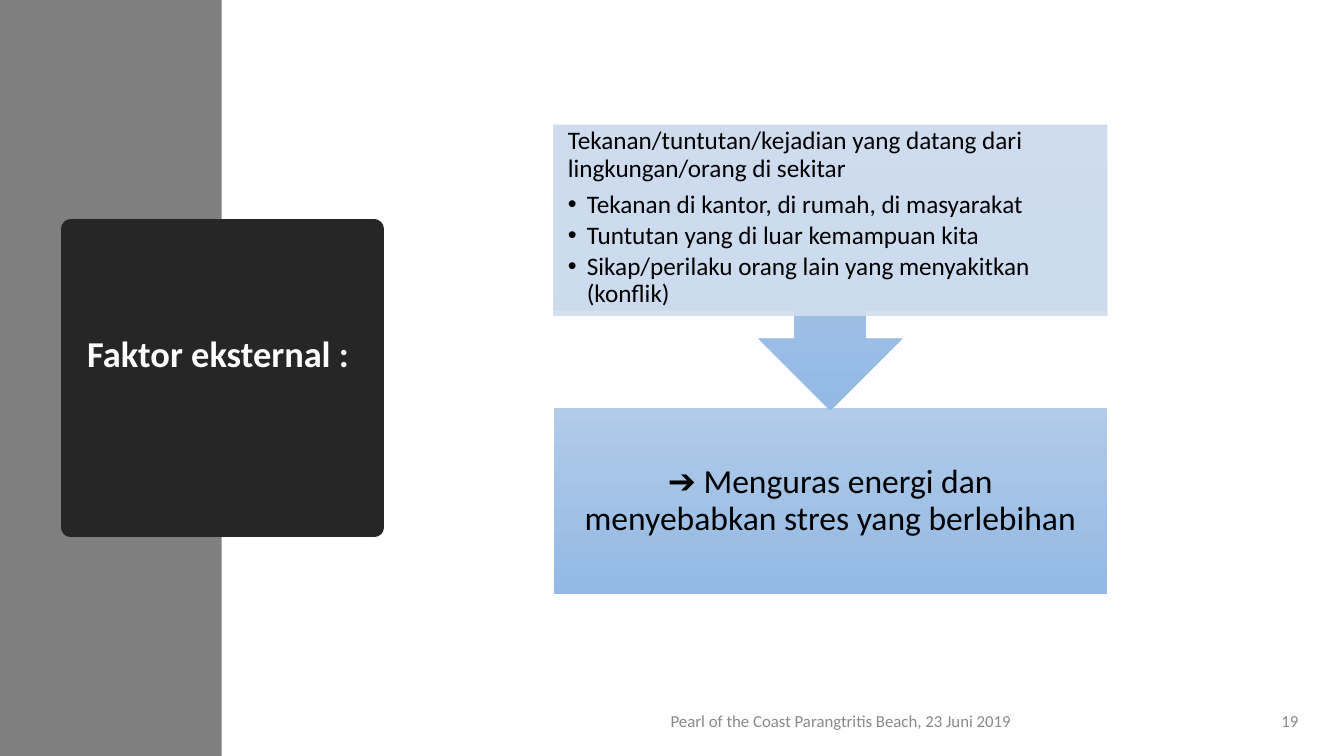
from pptx import Presentation
from pptx.dml.color import RGBColor
from pptx.enum.shapes import MSO_SHAPE as Preset
from pptx.enum.text import MSO_ANCHOR as Anchor, MSO_AUTO_SIZE as AutoSize, PP_ALIGN as Align
from pptx.oxml.ns import qn
from pptx.util import Cm, Pt
from lxml.etree import SubElement

FONT = "Calibri"
SLIDE_WIDTH, SLIDE_HEIGHT = 33.87, 19.05
PRESSURES = [
    "Tekanan di kantor, di rumah, di masyarakat",
    "Tuntutan yang di luar kemampuan kita",
    "Sikap/perilaku orang lain yang menyakitkan (konflik)",
]


def colour(value):
    return RGBColor.from_string(value)


def place(shape, box):
    shape.left, shape.top, shape.width, shape.height = [Cm(length) for length in box]


def set_frame(shape, anchor, side, edge):
    frame = shape.text_frame
    frame.word_wrap = True
    frame.auto_size = AutoSize.NONE
    frame.vertical_anchor = anchor
    frame.margin_left = frame.margin_right = Cm(side)
    frame.margin_top = frame.margin_bottom = Cm(edge)
    return frame


def style(para, size, ink, align, spacing=0.9, after=0, bold=False):
    para.alignment = align
    para.line_spacing = spacing
    para.space_after = Pt(after)
    for span in para.runs:
        span.font.name = FONT
        span.font.size = Pt(size)
        span.font.bold = bold
        span.font.color.rgb = colour(ink)


def add_bullet(para, indent):
    properties = para._p.get_or_add_pPr()
    properties.set("marL", str(Cm(indent)))
    properties.set("indent", str(-Cm(indent)))
    SubElement(properties, qn("a:buFont"), typeface="Arial")
    SubElement(properties, qn("a:buChar"), char="•")


def set_alpha(fill, percent):
    for tone in fill._xPr.iter(qn("a:srgbClr")):
        SubElement(tone, qn("a:alpha"), val=str(percent * 1000))


def add_block(page, preset, box):
    block = page.shapes.add_shape(preset, *[Cm(length) for length in box])
    block.shadow.inherit = False
    block.line.fill.background()
    return block


def shade(block):
    block.fill.gradient()
    block.fill.gradient_angle = 270
    for stop, tone in zip(block.fill.gradient_stops, ("B1CBE9", "93B9E4")):
        stop.color.rgb = colour(tone)


def build_heading(page, box):
    band = add_block(page, Preset.RECTANGLE, (0, 0, 5.59, SLIDE_HEIGHT))
    band.fill.solid()
    band.fill.fore_color.rgb = colour("7F7F7F")
    title = page.shapes.title
    title.element.addprevious(band.element)
    place(title, box)
    title.fill.solid()
    title.fill.fore_color.rgb = colour("262626")
    title.line.color.rgb = colour("262626")
    title.line.width = Pt(13.75)
    frame = set_frame(title, Anchor.MIDDLE, 0.25, 0.13)
    frame.margin_bottom = Cm(1.27)
    frame.text = "Faktor eksternal : "
    style(frame.paragraphs[0], 26, "FFFFFF", Align.CENTER, bold=True)


def build_flow(page, box):
    left, top, width, height = box
    result_height = 4.67
    result_top = top + height - result_height

    result = add_block(page, Preset.RECTANGLE, (left, result_top, width, result_height))
    shade(result)
    frame = set_frame(result, Anchor.MIDDLE, 0.48, 0.48)
    frame.text = "➔ Menguras energi dan menyebabkan stres yang berlebihan"
    style(frame.paragraphs[0], 24, "000000", Align.CENTER)

    callout = add_block(page, Preset.DOWN_ARROW_CALLOUT,
                        (left, top, width, result_top - top + 0.05))
    shade(callout)

    panel = add_block(page, Preset.RECTANGLE, (left, top, width, 4.8))
    panel.fill.solid()
    panel.fill.fore_color.rgb = colour("D2DEEF")
    set_alpha(panel.fill, 90)
    panel.line.color.rgb = colour("D2DEEF")
    panel.line.width = Pt(0.5)
    set_alpha(panel.line.fill, 90)
    frame = set_frame(panel, Anchor.TOP, 0.36, 0.08)
    frame.text = "Tekanan/tuntutan/kejadian yang datang dari lingkungan/orang di sekitar"
    style(frame.paragraphs[0], 18, "000000", Align.LEFT, after=6.3)
    for pressure in PRESSURES:
        para = frame.add_paragraph()
        para.text = pressure
        para.level = 1
        style(para, 18, "000000", Align.LEFT, after=2.7)
        add_bullet(para, 0.48)


def build_footer(page, box):
    left, top, width, height = box
    number_width = 1.55
    parts = [
        ("Pearl of the Coast Parangtritis Beach, 23 Juni 2019", left, 19.53, Align.CENTER),
        ("19", left + width - number_width, number_width, Align.RIGHT),
    ]
    for text, start, span_width, align in parts:
        note = page.shapes.add_textbox(Cm(start), Cm(top), Cm(span_width), Cm(height))
        frame = set_frame(note, Anchor.MIDDLE, 0.25, 0.13)
        frame.text = text
        style(frame.paragraphs[0], 12, "898989", align, spacing=1.0)


def main():
    deck = Presentation()
    deck.slide_width, deck.slide_height = Cm(SLIDE_WIDTH), Cm(SLIDE_HEIGHT)
    page = deck.slides.add_slide(deck.slide_layouts.get_by_name("Title Only"))
    build_heading(page, (1.78, 5.77, 7.65, 7.52))
    build_footer(page, (11.43, 17.65, 21.54, 1.02))
    build_flow(page, (13.95, 3.15, 13.95, 11.81))
    deck.save("out.pptx")


if __name__ == "__main__":
    main()
